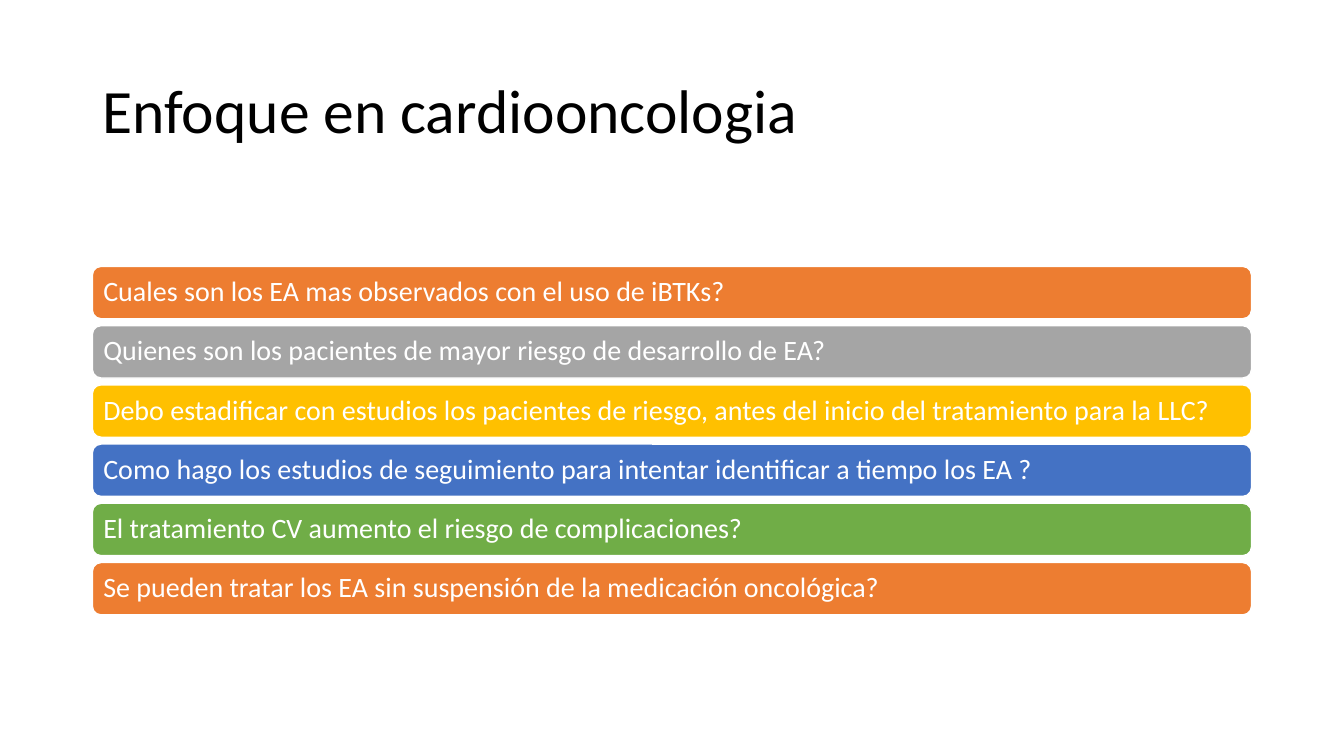
"""Build the slide of questions on the cardio-oncology approach."""
import pptx
import pptx.util
import pptx.dml.color
import pptx.enum.shapes
import pptx.enum.text

Pt = pptx.util.Pt


def color(code):
    return pptx.dml.color.RGBColor.from_string(code)


def write(shape, text, size, code):
    frame = shape.text_frame
    frame.word_wrap = True
    frame.vertical_anchor = pptx.enum.text.MSO_ANCHOR.MIDDLE
    line = frame.paragraphs[0]
    line.text = text
    line.alignment = pptx.enum.text.PP_ALIGN.LEFT
    line.line_spacing = 0.9
    line.font.name = "Calibri"
    line.font.size = Pt(size)
    line.font.color.rgb = color(code)
    return frame


deck = pptx.Presentation()
deck.slide_width = Pt(960)
deck.slide_height = Pt(540)
slide = deck.slides.add_slide(deck.slide_layouts[6])

left, width = 66, 828
title = slide.shapes.add_textbox(Pt(left), Pt(28.75), Pt(width), Pt(104.4))
write(title, "Enfoque en cardiooncologia", 44, "000000")

rows = [
    ("Cuales son los EA mas observados con el uso de iBTKs?", "ED7D31"),
    ("Quienes son los pacientes de mayor riesgo de desarrollo de EA?", "A5A5A5"),
    ("Debo estadificar con estudios los pacientes de riesgo, antes del inicio "
     "del tratamiento para la LLC?", "FFC000"),
    ("Como hago los estudios de seguimiento para intentar identificar "
     "a tiempo los EA ?", "4472C4"),
    ("El tratamiento CV aumento el riesgo de complicaciones?", "70AD47"),
    ("Se pueden tratar los EA sin suspensión de la medicación oncológica?", "ED7D31"),
]
top, pitch, height = 190.3, 42.3, 37.4
for index, (text, fill) in enumerate(rows):
    bar = slide.shapes.add_shape(
        pptx.enum.shapes.MSO_SHAPE.ROUNDED_RECTANGLE,
        Pt(left), Pt(top + index * pitch), Pt(width), Pt(height))
    bar.shadow.inherit = False
    bar.fill.solid()
    bar.fill.fore_color.rgb = color(fill)
    bar.line.color.rgb = color("FFFFFF")
    bar.line.width = Pt(1)
    frame = write(bar, text, 20, "FFFFFF")
    frame.margin_left = frame.margin_right = Pt(6)
    frame.margin_top = frame.margin_bottom = Pt(6)

deck.save("out.pptx")
